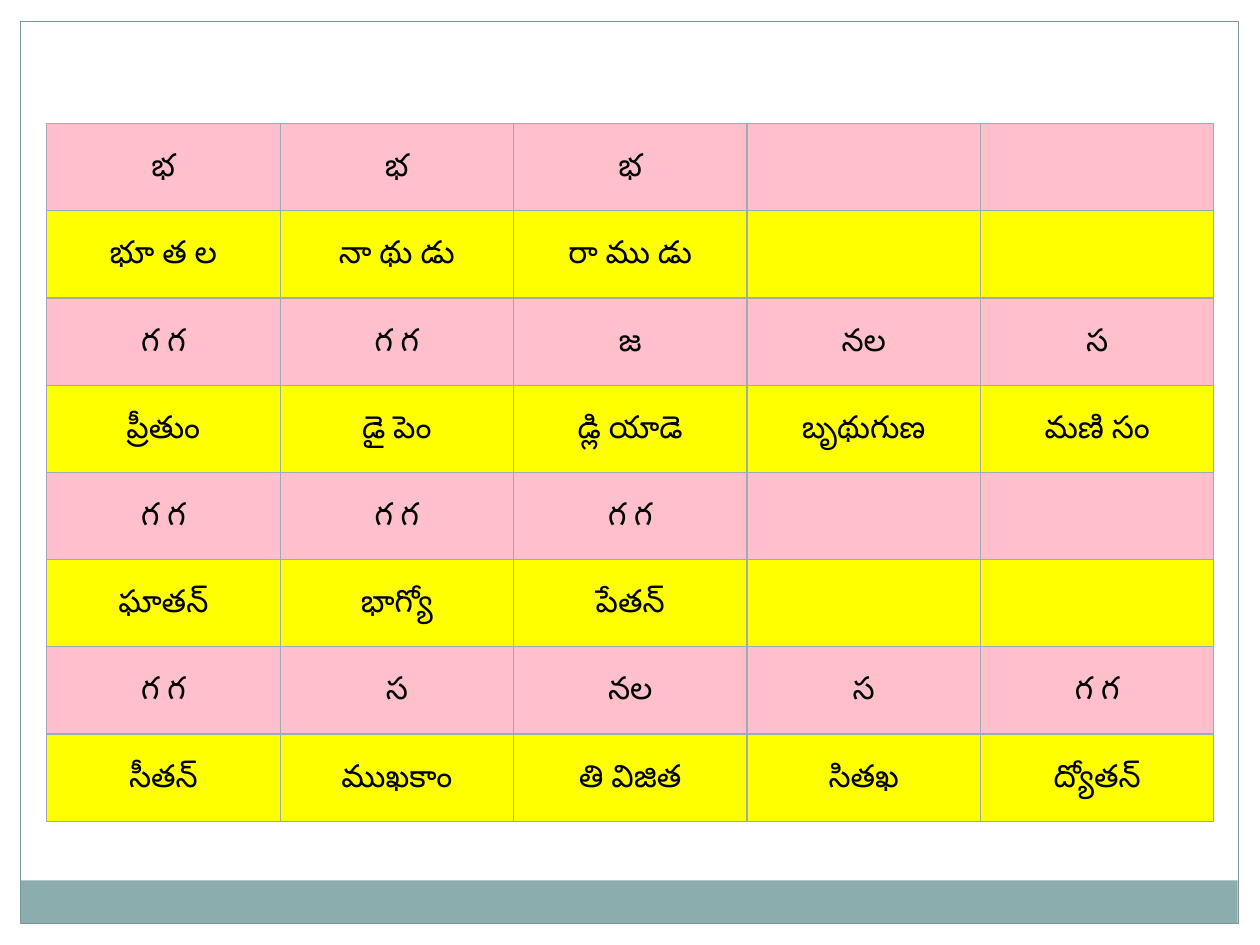
from dataclasses import dataclass

from lxml import etree
from pptx import Presentation
from pptx.dml.color import RGBColor
from pptx.enum.shapes import MSO_SHAPE
from pptx.enum.text import MSO_ANCHOR, PP_ALIGN
from pptx.oxml.ns import qn
from pptx.slide import Slide
from pptx.table import _Cell
from pptx.util import Cm, Pt

RECTANGLE = MSO_SHAPE.RECTANGLE
MIDDLE = MSO_ANCHOR.MIDDLE
CENTER = PP_ALIGN.CENTER

WHITE = RGBColor(0xFF, 0xFF, 0xFF)
PINK = RGBColor(0xFF, 0xC0, 0xCB)
YELLOW = RGBColor(0xFF, 0xFF, 0x00)
BLACK = RGBColor(0x00, 0x00, 0x00)
BORDER_GREY = RGBColor(0xA2, 0xA9, 0xB1)
BAND_TEAL = RGBColor(0x8C, 0xAD, 0xAE)
FRAME_TEAL = RGBColor(0x7C, 0x99, 0x9A)

FONT_NAME = "TeX Gyre Schola"
LINE_WIDTH = Pt(0.75)
SLIDE_WIDTH = 25.4
SLIDE_HEIGHT = 19.05
MARGIN = 0.42
COLUMN_COUNT = 5
TABLE_LEFT = Cm(0.94)
TABLE_TOP = Cm(2.49)
TABLE_WIDTH = Cm(23.53)
TABLE_HEIGHT = Cm(14.07)


@dataclass(frozen=True)
class Panel:
    left: float
    top: float
    width: float
    height: float
    fill: RGBColor | None = None
    line: RGBColor | None = None


@dataclass(frozen=True)
class Verse:
    ganas: tuple[str, ...]
    syllables: tuple[str, ...]


PANELS = (
    Panel(0, 0, SLIDE_WIDTH, MARGIN, fill=WHITE),
    Panel(SLIDE_WIDTH - MARGIN, 0, MARGIN, SLIDE_HEIGHT, fill=WHITE),
    Panel(0, 0, MARGIN, SLIDE_HEIGHT, fill=WHITE),
    Panel(MARGIN, 17.75, 24.53, 0.86, fill=BAND_TEAL),
    Panel(MARGIN, 0.43, 24.55, 18.19, line=FRAME_TEAL),
)

VERSES = (
    Verse(("భ", "భ", "భ"), ("భూ త ల", "నా థు డు", "రా ము డు")),
    Verse(
        ("గ గ", "గ గ", "జ", "నల", "స"),
        ("ప్రీతుం", "డై పెం", "డ్లి యాడె", "బృథుగుణ", "మణి సం"),
    ),
    Verse(("గ గ", "గ గ", "గ గ"), ("ఘాతన్", "భాగ్యో", "పేతన్")),
    Verse(
        ("గ గ", "స", "నల", "స", "గ గ"),
        ("సీతన్", "ముఖకాం", "తి విజిత", "సితఖ", "ద్యోతన్"),
    ),
)


def draw_panel(slide: Slide, panel: Panel) -> None:
    shape = slide.shapes.add_shape(
        RECTANGLE, Cm(panel.left), Cm(panel.top), Cm(panel.width), Cm(panel.height)
    )
    shape.shadow.inherit = False
    if panel.fill is None:
        shape.fill.background()
    else:
        shape.fill.solid()
        shape.fill.fore_color.rgb = panel.fill
    if panel.line is None:
        shape.line.fill.background()
    else:
        shape.line.color.rgb = panel.line
        shape.line.width = LINE_WIDTH


def draw_borders(cell: _Cell) -> None:
    properties = cell._tc.get_or_add_tcPr()
    for index, side in enumerate(("a:lnL", "a:lnR", "a:lnT", "a:lnB")):
        border = etree.Element(qn(side), w=str(LINE_WIDTH))
        fill = etree.SubElement(border, qn("a:solidFill"))
        etree.SubElement(fill, qn("a:srgbClr"), val=str(BORDER_GREY))
        properties.insert(index, border)


def format_cell(cell: _Cell, text: str, color: RGBColor) -> None:
    cell.fill.solid()
    cell.fill.fore_color.rgb = color
    cell.vertical_anchor = MIDDLE
    draw_borders(cell)
    cell.text = text
    paragraph = cell.text_frame.paragraphs[0]
    paragraph.alignment = CENTER
    paragraph.font.name = FONT_NAME
    paragraph.font.size = Pt(18)
    paragraph.font.color.rgb = BLACK


def draw_verses(slide: Slide, verses: tuple[Verse, ...]) -> None:
    rows = [
        row
        for verse in verses
        for row in ((verse.ganas, PINK), (verse.syllables, YELLOW))
    ]
    table = slide.shapes.add_table(
        len(rows), COLUMN_COUNT, TABLE_LEFT, TABLE_TOP, TABLE_WIDTH, TABLE_HEIGHT
    ).table
    table.first_row = False
    table.horz_banding = False
    for row_index, (texts, color) in enumerate(rows):
        for column_index in range(COLUMN_COUNT):
            text = texts[column_index] if column_index < len(texts) else ""
            format_cell(table.cell(row_index, column_index), text, color)


def main() -> None:
    presentation = Presentation()
    presentation.slide_width = Cm(SLIDE_WIDTH)
    presentation.slide_height = Cm(SLIDE_HEIGHT)
    slide = presentation.slides.add_slide(presentation.slide_layouts[6])
    for panel in PANELS:
        draw_panel(slide, panel)
    draw_verses(slide, VERSES)
    presentation.save("out.pptx")


if __name__ == "__main__":
    main()
